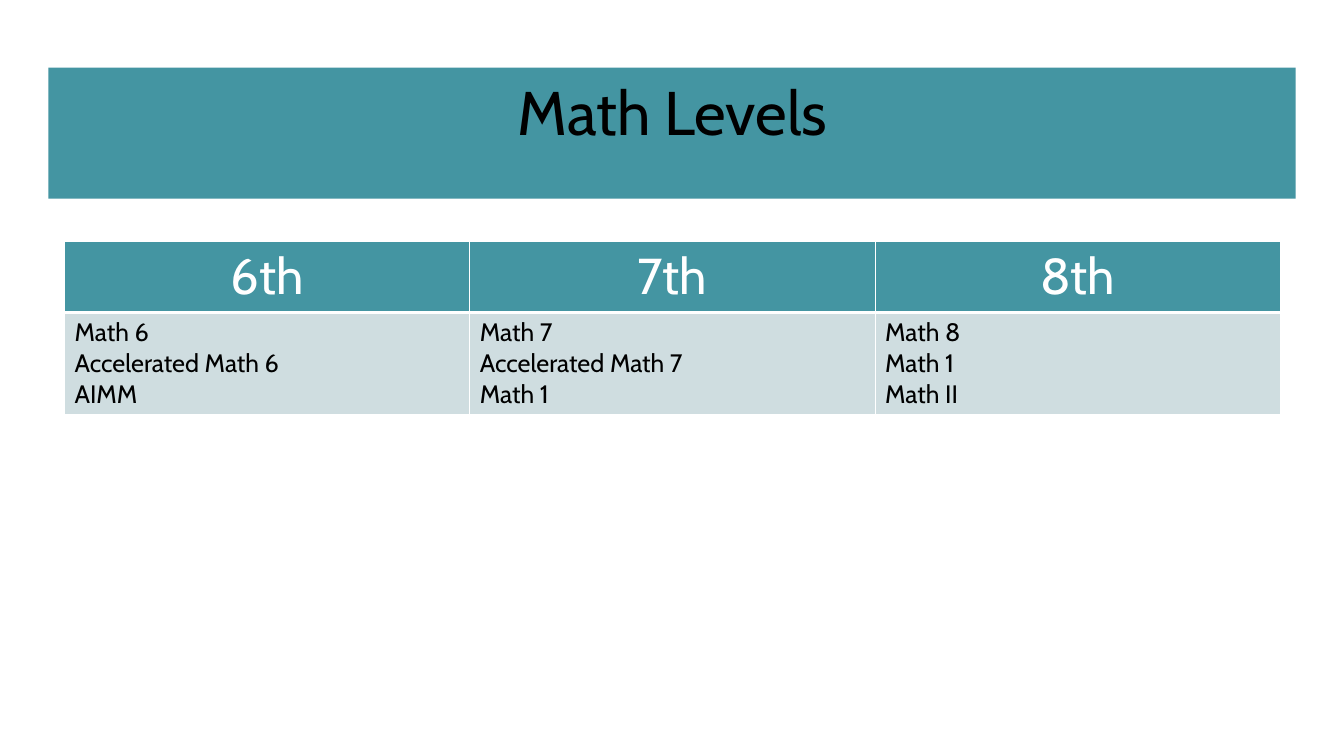
from lxml.etree import SubElement
from pptx import Presentation
from pptx.dml.color import RGBColor
from pptx.enum.shapes import MSO_SHAPE
from pptx.enum.text import MSO_ANCHOR, PP_ALIGN
from pptx.oxml.ns import qn
from pptx.util import Inches, Pt

TEAL = RGBColor(0x44, 0x95, 0xA2)
PALE = RGBColor(0xCF, 0xDD, 0xE0)
WHITE = RGBColor(0xFF, 0xFF, 0xFF)
BLACK = RGBColor(0, 0, 0)

MATH_LEVELS = {
    "6th": ["Math 6", "Accelerated Math 6", "AIMM"],
    "7th": ["Math 7", "Accelerated Math 7", "Math 1"],
    "8th": ["Math 8", "Math 1", "Math II"],
}


class MathSlide:
    font = "Cabin"

    def __init__(self, deck):
        self.page = deck.slides.add_slide(deck.slide_layouts[5])

    def add_lines(self, frame, lines, size, color, align):
        for index, line in enumerate(lines):
            para = frame.add_paragraph() if index else frame.paragraphs[0]
            para.alignment = align
            span = para.add_run()
            span.text = line
            span.font.name = self.font
            span.font.size = Pt(size)
            span.font.color.rgb = color

    def banner(self, left, top, width, height):
        box = self.page.shapes.add_shape(
            MSO_SHAPE.RECTANGLE, Inches(left), Inches(top), Inches(width), Inches(height))
        box.shadow.inherit = False
        box.fill.solid()
        box.fill.fore_color.rgb = TEAL
        box.line.fill.background()
        tree = box._element.getparent()
        tree.remove(box._element)
        tree.insert(2, box._element)

    def title(self, text, left, top, width, height):
        box = self.page.shapes.title
        box.left, box.top = Inches(left), Inches(top)
        box.width, box.height = Inches(width), Inches(height)
        frame = box.text_frame
        frame.word_wrap = True
        frame.vertical_anchor = MSO_ANCHOR.TOP
        self.add_lines(frame, [text], 44, BLACK, PP_ALIGN.CENTER)
        frame.paragraphs[0].line_spacing = 0.9

    def borders(self, cell, bottom):
        properties = cell._tc.get_or_add_tcPr()
        for side, width in (("L", 1), ("R", 1), ("T", 1), ("B", bottom)):
            line = SubElement(properties, qn(f"a:ln{side}"), w=str(Pt(width)))
            fill = SubElement(line, qn("a:solidFill"))
            SubElement(fill, qn("a:srgbClr"), val=str(WHITE))

    def cell(self, cell, lines, fill, size, color, align, bottom):
        self.borders(cell, bottom)
        cell.fill.solid()
        cell.fill.fore_color.rgb = fill
        self.add_lines(cell.text_frame, lines, size, color, align)

    def table(self, levels, left, top, width, row_heights):
        table = self.page.shapes.add_table(
            len(row_heights), len(levels), Inches(left), Inches(top),
            Inches(width), Inches(sum(row_heights))).table
        for row, height in zip(table.rows, row_heights):
            row.height = Inches(height)
        for column, (grade, courses) in enumerate(levels.items()):
            self.cell(table.cell(0, column), [grade], TEAL, 36, WHITE, PP_ALIGN.CENTER, 3)
            self.cell(table.cell(1, column), courses, PALE, 18, BLACK, PP_ALIGN.LEFT, 1)


def main():
    deck = Presentation()
    deck.slide_width, deck.slide_height = Inches(13.33), Inches(7.5)
    slide = MathSlide(deck)
    slide.banner(0.48, 0.67, 12.37, 1.3)
    slide.title("Math Levels", 0.64, 0.77, 12.06, 1.11)
    slide.table(MATH_LEVELS, 0.64, 2.39, 12.06, [0.7, 1.0])
    deck.save("out.pptx")


if __name__ == "__main__":
    main()
